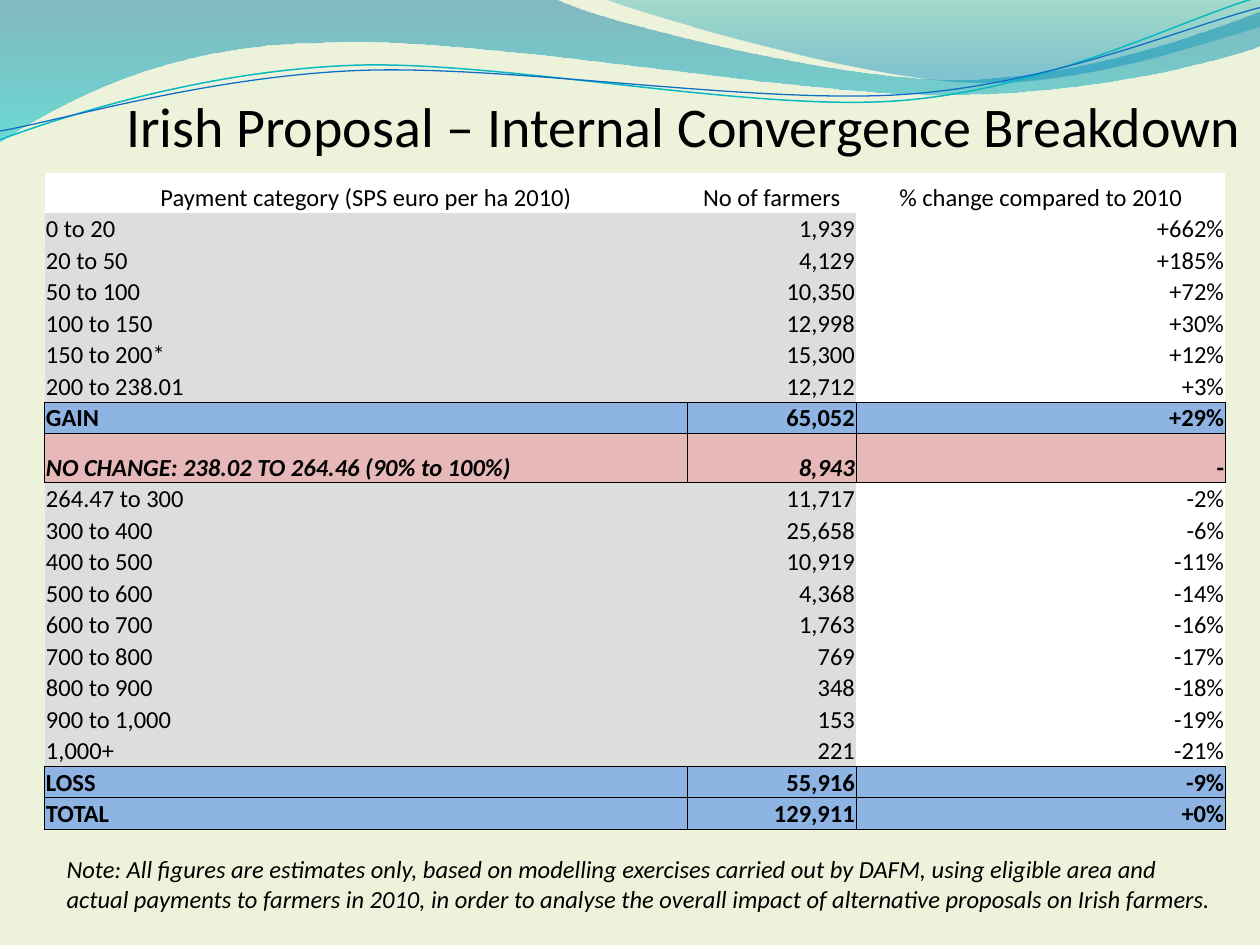
from math import cos, radians, sin

from lxml.etree import SubElement
from pptx import Presentation
from pptx.dml.color import RGBColor
from pptx.enum.text import MSO_ANCHOR as Anchor, MSO_AUTO_SIZE as AutoSize, PP_ALIGN as Align
from pptx.oxml.ns import qn
from pptx.util import Emu, Inches, Pt

CELL = Inches(0.1)  # the slide is a grid of 100 columns by 75 rows
COLS, ROWS = 100, 75

CREAM = RGBColor(0xED, 0xF3, 0xDB)
BLACK = RGBColor(0, 0, 0)
WHITE = RGBColor(0xFF, 0xFF, 0xFF)
GREY = RGBColor(0xDD, 0xDD, 0xDD)
BLUE = RGBColor(0x8D, 0xB4, 0xE2)
PINK = RGBColor(0xE6, 0xB8, 0xB7)
DEEP_BLUE = RGBColor(0x00, 0x74, 0xA1)
TURQUOISE = RGBColor(0x00, 0xC6, 0xCF)
TEAL = RGBColor(0x00, 0xA1, 0xA9)
SEA_BLUE = RGBColor(0x00, 0x8B, 0xBF)
TEAL_LINE = RGBColor(0x0A, 0xB8, 0xBF)
BLUE_LINE = RGBColor(0x0F, 0x6F, 0xC6)

NO_STYLE = "{2D5ABB26-0587-4C30-8999-92F81FD0307C}"
RIPPLE_TILT = 357.3
COLUMN_WIDTHS = (51, 13.4, 29.3)
HEADER = ("Payment category (SPS euro per ha 2010)", "No of farmers", "% change compared to 2010")
BREAKDOWN = [
    ("0 to 20", "1,939", "+662%"),
    ("20 to 50", "4,129", "+185%"),
    ("50 to 100", "10,350", "+72%"),
    ("100 to 150", "12,998", "+30%"),
    ("150 to 200*", "15,300", "+12%"),
    ("200 to 238.01", "12,712", "+3%"),
    ("GAIN", "65,052", "+29%"),
    ("NO CHANGE: 238.02 TO 264.46 (90% to 100%)", "8,943", "-"),
    ("264.47 to 300", "11,717", "-2%"),
    ("300 to 400", "25,658", "-6%"),
    ("400 to 500", "10,919", "-11%"),
    ("500 to 600", "4,368", "-14%"),
    ("600 to 700", "1,763", "-16%"),
    ("700 to 800", "769", "-17%"),
    ("800 to 900", "348", "-18%"),
    ("900 to 1,000", "153", "-19%"),
    ("1,000+", "221", "-21%"),
    ("LOSS", "55,916", "-9%"),
    ("TOTAL", "129,911", "+0%"),
]
SUMMARY_FILLS = {"GAIN": BLUE, "NO CHANGE": PINK, "LOSS": BLUE, "TOTAL": BLUE}


def grid(n):
    return Emu(round(n * CELL))


def write(tf, text, size=14, bold=False, italic=False, align=Align.LEFT):
    p = tf.paragraphs[0]
    p.alignment = align
    r = p.add_run()
    r.text = text
    font = r.font
    font.name, font.size, font.bold, font.italic = "Calibri", Pt(size), bold, italic
    font.color.rgb = BLACK


def add_curve(s, box, segments, close=False, tilt=0):
    """Freeform filling box; a segment of one point is a line, of three a Bezier curve."""
    left, top, width, height = box
    mid_x, mid_y = left + width / 2, top + height / 2
    c, n = cos(radians(-tilt)), sin(radians(-tilt))

    def local(x, y):
        dx, dy = x - mid_x, y - mid_y
        return grid(dx * c - dy * n + width / 2), grid(dx * n + dy * c + height / 2)

    builder = s.shapes.build_freeform(grid(left), grid(top))
    builder.add_line_segments([(grid(left + width), grid(top + height))], close=False)
    sp = builder.convert_to_shape()
    path = sp.element.find(".//" + qn("a:path"))
    for command in list(path):
        path.remove(command)
    for i, points in enumerate(segments):
        tag = "cubicBezTo" if len(points) == 3 else "lnTo" if i else "moveTo"
        command = SubElement(path, qn(f"a:{tag}"))
        for point in points:
            x, y = local(*point)
            SubElement(command, qn("a:pt"), x=str(x), y=str(y))
    if close:
        SubElement(path, qn("a:close"))
    sp.rotation = tilt
    sp.shadow.inherit = False
    return sp


def add_wave(s, box, segments, stops):
    """Closed wave with a vertical gradient of (position, colour, opacity) stops."""
    sp = add_curve(s, box, segments, close=True)
    sp.line.fill.background()
    sp.fill.gradient()
    sp.fill.gradient_angle = 270
    for stop, (position, color, _) in zip(sp.fill.gradient_stops, stops):
        stop.position = position
        stop.color.rgb = color
    colors = sp.element.spPr.iter(qn("a:srgbClr"))
    for clr, (_, _, opacity) in zip(colors, stops):
        SubElement(clr, qn("a:alpha"), val=str(opacity * 1000))


def add_ripple(s, box, segments, color, width):
    sp = add_curve(s, box, segments, tilt=RIPPLE_TILT)
    sp.fill.background()
    sp.line.color.rgb = color
    sp.line.width = Pt(width)


def add_wave_band(s):
    add_wave(s, (-0.1, -0.1, 100.2, 11.4), [
        [(0, -0.1)], [(44, -0.1)],
        [(47.6, 1.7), (66.4, 6.3), (75.8, 6.3)], [(85.3, 6.3), (95.8, 2.6), (100, 0.9)],
        [(100.1, 3.6)],
        [(98.3, 4.4), (87, 7.6), (74.6, 7.5)], [(62.2, 7.5), (38.2, 2.8), (25.7, 3.4)],
        [(12.9, 3.5), (4.6, 8.3), (-0.1, 11.3)], [(0, -0.1)],
    ], [(0, DEEP_BLUE, 45), (1, TURQUOISE, 55)])
    add_wave(s, (47.9, -0.1, 52.1, 7), [
        [(47.9, -0.1)], [(50.9, 1.1), (68.2, 6.2), (76.9, 6.5)],
        [(85.6, 6.9), (96.1, 3.2), (100, 2.1)], [(100, 0)], [(47.9, -0.1)],
    ], [(0, TEAL, 30), (0.8, SEA_BLUE, 45)])
    add_ripple(s, (-0.2, 2.2, 100.2, 7.1), [
        [(0, 11.1)], [(4.8, 9.3), (15.8, 5.7), (27.7, 5.2)],
        [(39.5, 4.7), (59.3, 8.9), (71.3, 8)], [(83.3, 7.1), (93.8, 1.5), (99.8, -0.2)],
    ], TEAL_LINE, 0.85)
    add_ripple(s, (-0.2, 3, 100.3, 5.8), [
        [(0, 10.4)], [(4.7, 9.6), (16.4, 6.1), (28.3, 5.6)],
        [(40.3, 5.1), (59.7, 8.3), (71.7, 7.5)], [(83.6, 6.7), (94.1, 2.1), (100, 0.6)],
    ], BLUE_LINE, 0.75)


def border(cell, sides):
    """Thin black lines on the named sides, none on the others."""
    tc_pr = cell._tc.get_or_add_tcPr()
    for i, side in enumerate("LRTB"):
        ln = SubElement(tc_pr, qn(f"a:ln{side}"), w=str(Pt(0.5)))
        if side in sides:
            fill = SubElement(ln, qn("a:solidFill"))
            SubElement(fill, qn("a:srgbClr"), val=str(BLACK))
        else:
            SubElement(ln, qn("a:noFill"))
        tc_pr.insert(i, ln)  # borders come before the fill


def fill_cell(cell, text, color, sides="", **fmt):
    cell.margin_left = cell.margin_right = cell.margin_top = grid(0.1)
    cell.margin_bottom = 0
    cell.vertical_anchor = Anchor.BOTTOM
    cell.fill.solid()
    cell.fill.fore_color.rgb = color
    border(cell, sides)
    write(cell.text_frame, text, **fmt)


def add_breakdown(s, box):
    frame = s.shapes.add_table(len(BREAKDOWN) + 1, len(HEADER), *map(grid, box))
    table = frame.table
    table.first_row = table.horz_banding = False
    frame.element.find(".//" + qn("a:tableStyleId")).text = NO_STYLE
    for col, width in zip(table.columns, COLUMN_WIDTHS):
        col.width = grid(width)
    for row in table.rows:
        row.height = grid(2.5)
    table.rows[0].height = grid(3.2)
    for c, text in enumerate(HEADER):
        fill_cell(table.cell(0, c), text, WHITE, align=Align.CENTER)

    summaries = [SUMMARY_FILLS.get(row[0].split(":")[0]) for row in BREAKDOWN]
    for r, (row, summary) in enumerate(zip(BREAKDOWN, summaries)):
        unchanged = summary == PINK
        if unchanged:
            table.rows[r + 1].height = grid(3.9)
        if summary:
            sides = "LRTB"
        else:
            sides = "T" if r and summaries[r - 1] else "B" if summaries[r + 1] else ""
        for c, text in enumerate(row):
            fill_cell(table.cell(r + 1, c), text, summary or (GREY if c < 2 else WHITE), sides,
                      bold=bool(summary), italic=unchanged and c < 2,
                      align=Align.RIGHT if c else Align.LEFT)


def place_title(s, box):
    title = s.shapes.title
    title.left, title.top, title.width, title.height = map(grid, box)
    title.element.getparent().append(title.element)  # in front of the waves
    tf = title.text_frame
    tf.word_wrap = False
    tf.auto_size = AutoSize.SHAPE_TO_FIT_TEXT
    tf.vertical_anchor = Anchor.TOP
    write(tf, "Irish Proposal – Internal Convergence Breakdown", size=32)


def add_note(s, box):
    tf = s.shapes.add_textbox(*map(grid, box)).text_frame
    tf.word_wrap = True
    tf.auto_size = AutoSize.SHAPE_TO_FIT_TEXT
    write(tf, "Note: All figures are estimates only, based on modelling exercises carried out by "
          "DAFM, using eligible area and actual payments to farmers in 2010, in order to analyse "
          "the overall impact of alternative proposals on Irish farmers.", italic=True)


def main():
    prs = Presentation()
    prs.slide_width, prs.slide_height = grid(COLS), grid(ROWS)
    s = prs.slides.add_slide(prs.slide_layouts[5])
    s.background.fill.solid()
    s.background.fill.fore_color.rgb = CREAM
    add_wave_band(s)
    add_note(s, (4.3, 67.3, 92.9, 5.7))
    add_breakdown(s, (3.55, 13.7, 93.7, 52.1))
    place_title(s, (9, 6.8, 91.1, 6.3))
    prs.save("out.pptx")


if __name__ == "__main__":
    main()
